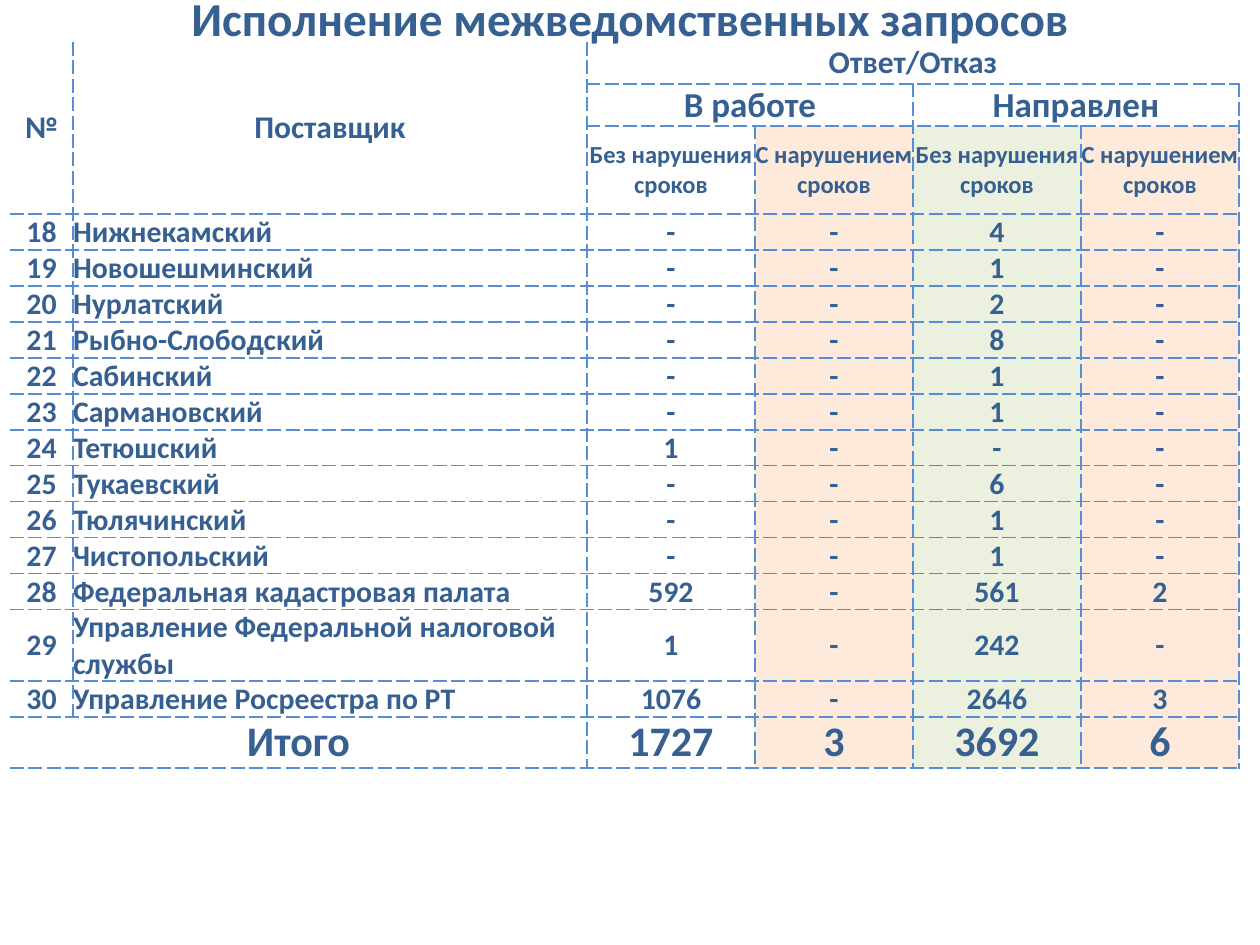
"""Build the slide on the fulfilment of interdepartmental requests."""
from dataclasses import dataclass

from lxml import etree
from pptx import Presentation
from pptx import util as u
from pptx.dml.color import RGBColor
from pptx.enum import text
from pptx.oxml.ns import qn

EMU_PER_PX = 914400 / 126


@dataclass(frozen=True)
class Theme:
    """Colours and type sizes of the slide."""
    font: str = "Calibri"
    ink: str = "376092"
    rule: str = "558ED5"
    overdue: str = "FDEADA"
    on_time: str = "EBF1DE"
    title: int = 27
    heading: int = 18
    status: int = 20
    deadline: int = 14
    body: int = 17
    total: int = 24


THEME = Theme()
COLUMN_WIDTHS = [63, 514, 168, 158, 168, 158]
COLUMN_FILLS = [None, None, None, THEME.overdue, THEME.on_time, THEME.overdue]
HEADER_HEIGHTS = [42, 42, 88]
BODY_HEIGHT, TOTAL_HEIGHT = 36, 51
HEADER_ROWS = len(HEADER_HEIGHTS)
FIRST_NUMBER = 18
DEADLINES = ["Без нарушения сроков", "С нарушением сроков"] * 2
SUPPLIERS = [
    ("Нижнекамский", "-", "-", "4", "-"),
    ("Новошешминский", "-", "-", "1", "-"),
    ("Нурлатский", "-", "-", "2", "-"),
    ("Рыбно-Слободский", "-", "-", "8", "-"),
    ("Сабинский", "-", "-", "1", "-"),
    ("Сармановский", "-", "-", "1", "-"),
    ("Тетюшский", "1", "-", "-", "-"),
    ("Тукаевский", "-", "-", "6", "-"),
    ("Тюлячинский", "-", "-", "1", "-"),
    ("Чистопольский", "-", "-", "1", "-"),
    ("Федеральная кадастровая палата", "592", "-", "561", "2"),
    ("Управление Федеральной налоговой службы", "1", "-", "242", "-"),
    ("Управление Росреестра по РТ", "1076", "-", "2646", "3"),
]
TOTALS = ["1727", "3", "3692", "6"]


def px(length):
    """Turn pixels into EMU."""
    return u.Emu(round(length * EMU_PER_PX))


def style_paragraph(paragraph, size, align=text.PP_ALIGN.CENTER):
    """Apply the bold theme face to a paragraph."""
    paragraph.alignment = align
    font = paragraph.font
    font.name, font.size, font.bold = THEME.font, u.Pt(size), True
    font.color.rgb = RGBColor.from_string(THEME.ink)


def add_title(slide, wording):
    """Fill and place the title placeholder."""
    title = slide.shapes.title
    title.left, title.top, title.width, title.height = map(px, (0, -18, 1260, 71))
    frame = title.text_frame
    frame.text = wording
    frame.word_wrap = True
    frame.auto_size = text.MSO_AUTO_SIZE.SHAPE_TO_FIT_TEXT
    frame.vertical_anchor = text.MSO_ANCHOR.MIDDLE
    style_paragraph(frame.paragraphs[0], THEME.title)


def set_borders(cell, visible_sides):
    """Draw dashed rules on the visible sides and clear the others."""
    properties = cell._tc.get_or_add_tcPr()
    for side in "LRTB":
        line = etree.SubElement(properties, qn(f"a:ln{side}"), w=str(u.Pt(1)))
        if side in visible_sides:
            fill = etree.SubElement(line, qn("a:solidFill"))
            etree.SubElement(fill, qn("a:srgbClr"), val=THEME.rule)
            etree.SubElement(line, qn("a:prstDash"), val="sysDash")
        else:
            etree.SubElement(line, qn("a:noFill"))


def fill_cell(table, row, column, wording, size, align=text.PP_ALIGN.CENTER):
    """Write one cell with its rules and its column colour."""
    cell = table.cell(row, column)
    cell.text = wording
    style_paragraph(cell.text_frame.paragraphs[0], size, align)
    cell.vertical_anchor = text.MSO_ANCHOR.MIDDLE
    cell.margin_left = cell.margin_right = cell.margin_top = cell.margin_bottom = 0
    sides = "B" + ("L" if column else "") + ("T" if row else "")
    if row or column < 2:
        sides += "R"
    set_borders(cell, sides)
    colour = COLUMN_FILLS[column] if row >= HEADER_ROWS - 1 else None
    if colour:
        cell.fill.solid()
        cell.fill.fore_color.rgb = RGBColor.from_string(colour)
    else:
        cell.fill.background()


def fill_header(table):
    """Write the three-level heading."""
    headings = [
        (0, 0, 2, 0, "№", THEME.heading),
        (0, 1, 2, 1, "Поставщик", THEME.heading),
        (0, 2, 0, 5, "Ответ/Отказ", THEME.heading),
        (1, 2, 1, 3, "В работе", THEME.status),
        (1, 4, 1, 5, "Направлен", THEME.status),
    ]
    for top, left, bottom, right, wording, size in headings:
        table.cell(top, left).merge(table.cell(bottom, right))
        fill_cell(table, top, left, wording, size)
    for column, deadline in enumerate(DEADLINES, start=2):
        fill_cell(table, HEADER_ROWS - 1, column, deadline, THEME.deadline)


def fill_suppliers(table):
    """Write one numbered row for each supplier."""
    for index, (supplier, *counts) in enumerate(SUPPLIERS):
        row = HEADER_ROWS + index
        fill_cell(table, row, 0, str(FIRST_NUMBER + index), THEME.body)
        fill_cell(table, row, 1, supplier, THEME.body, text.PP_ALIGN.LEFT)
        for column, count in enumerate(counts, start=2):
            fill_cell(table, row, column, count, THEME.body)


def fill_totals(table):
    """Write the closing row of totals."""
    row = HEADER_ROWS + len(SUPPLIERS)
    table.cell(row, 0).merge(table.cell(row, 1))
    fill_cell(table, row, 0, "Итого", THEME.total)
    for column, total in enumerate(TOTALS, start=2):
        fill_cell(table, row, column, total, THEME.total)


def add_request_table(slide):
    """Add the table of requests by supplier."""
    heights = HEADER_HEIGHTS + [BODY_HEIGHT] * len(SUPPLIERS) + [TOTAL_HEIGHT]
    table = slide.shapes.add_table(
        len(heights), len(COLUMN_WIDTHS), px(10), px(42),
        px(sum(COLUMN_WIDTHS)), px(sum(heights))).table
    table.first_row = table.horz_banding = False
    for column, width in zip(table.columns, COLUMN_WIDTHS):
        column.width = px(width)
    for row, height in zip(table.rows, heights):
        row.height = px(height)
    fill_header(table)
    fill_suppliers(table)
    fill_totals(table)


def main():
    """Build and save the presentation."""
    deck = Presentation()
    deck.slide_width, deck.slide_height = px(1260), px(945)
    slide = deck.slides.add_slide(deck.slide_layouts[5])
    add_title(slide, "Исполнение межведомственных запросов")
    add_request_table(slide)
    deck.save("out.pptx")


if __name__ == "__main__":
    main()
